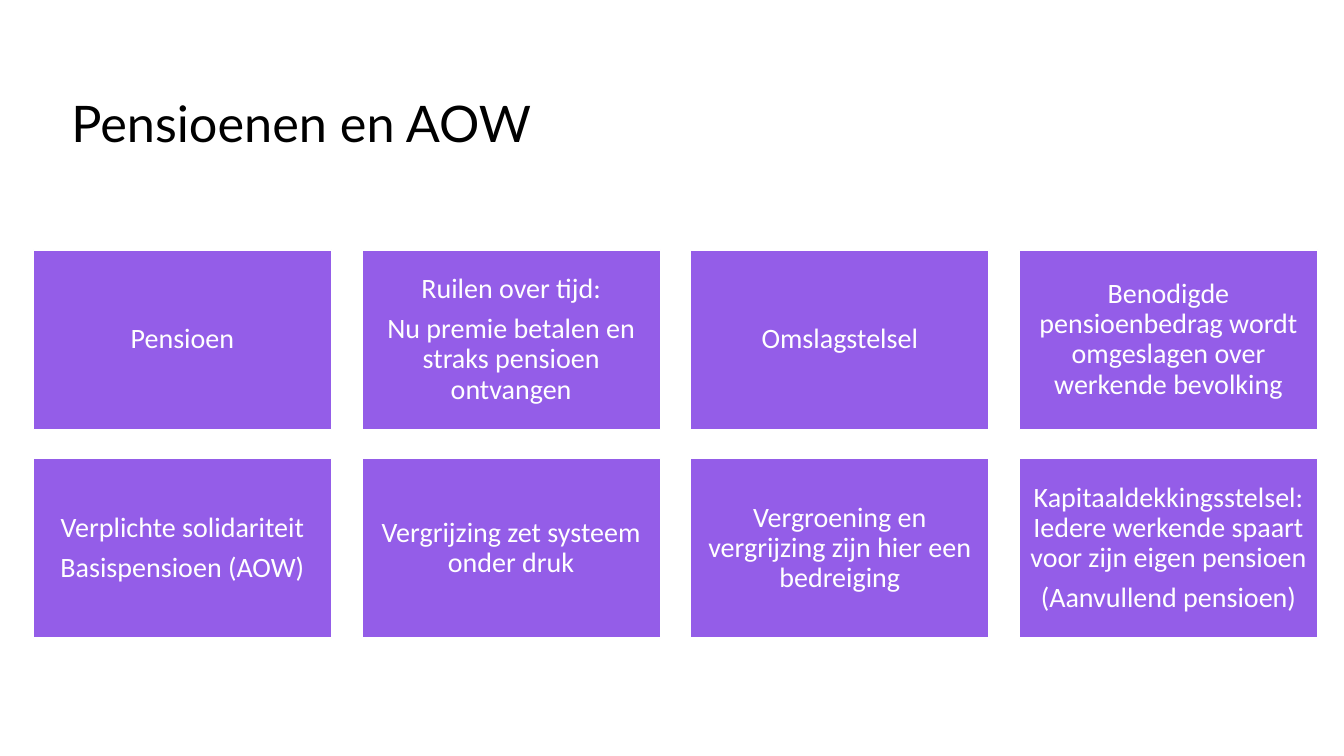
from pptx import Presentation
from pptx import util as u
from pptx.dml import color
from pptx.enum import shapes, text

WIDE, HIGH = 13.33, 7.5
LEFT, TOP = 0.33, 2.48
COL, ROW = 3.26, 2.07
CARD_W, CARD_H = 2.96, 1.78

CARDS = [
    [
        ["Pensioen"],
        ["Ruilen over tijd:", "Nu premie betalen en straks pensioen ontvangen"],
        ["Omslagstelsel"],
        ["Benodigde pensioenbedrag wordt omgeslagen over werkende bevolking"],
    ],
    [
        ["Verplichte solidariteit", "Basispensioen (AOW)"],
        ["Vergrijzing zet systeem onder druk"],
        ["Vergroening en vergrijzing zijn hier een bedreiging"],
        ["Kapitaaldekkingsstelsel: Iedere werkende spaart voor zijn eigen pensioen",
         "(Aanvullend pensioen)"],
    ],
]

TITLE_FONT = {"name": "Lato", "size": u.Pt(36)}
CARD_FONT = {"name": "Calibri", "size": u.Pt(20)}
CARD_PARA = {"alignment": text.PP_ALIGN.CENTER, "line_spacing": 0.9,
             "space_after": u.Pt(7)}
CARD_FRAME = {"word_wrap": True, "vertical_anchor": text.MSO_ANCHOR.MIDDLE}
CARD_FRAME.update({f"margin_{side}": u.Inches(0.08)
                   for side in ("left", "right", "top", "bottom")})


def apply(target, values):
    for name, value in values.items():
        setattr(target, name, value)


def tint(target, code):
    """Colour a fill, or the fill of a line or font."""
    target.solid()
    target.fore_color.rgb = color.RGBColor.from_string(code)


def write(frame, lines, font, shade, para):
    for i, line in enumerate(lines):
        p = frame.paragraphs[0] if i == 0 else frame.add_paragraph()
        apply(p, para)
        run = p.add_run()
        run.text = line
        apply(run.font, font)
        tint(run.font.fill, shade)


def title(slide, words):
    box = slide.shapes.add_textbox(*map(u.Inches, (0.61, 0.86, 10.55, 1.31)))
    box.text_frame.word_wrap = True
    write(box.text_frame, [words], TITLE_FONT, "000000", {})


def card(slide, col, row, lines):
    place = (LEFT + col * COL, TOP + row * ROW, CARD_W, CARD_H)
    box = slide.shapes.add_shape(shapes.MSO_SHAPE.RECTANGLE, *map(u.Inches, place))
    box.shadow.inherit = False
    tint(box.fill, "945DE8")
    tint(box.line.fill, "FFFFFF")
    box.line.width = u.Pt(1)
    apply(box.text_frame, CARD_FRAME)
    write(box.text_frame, lines, CARD_FONT, "FFFFFF", CARD_PARA)


def main():
    deck = Presentation()
    deck.slide_width, deck.slide_height = u.Inches(WIDE), u.Inches(HIGH)
    slide = deck.slides.add_slide(deck.slide_layouts[6])
    tint(slide.background.fill, "FFFFFF")
    title(slide, "Pensioenen en AOW")
    for row, cards in enumerate(CARDS):
        for col, lines in enumerate(cards):
            card(slide, col, row, lines)
    deck.save("out.pptx")


if __name__ == "__main__":
    main()
